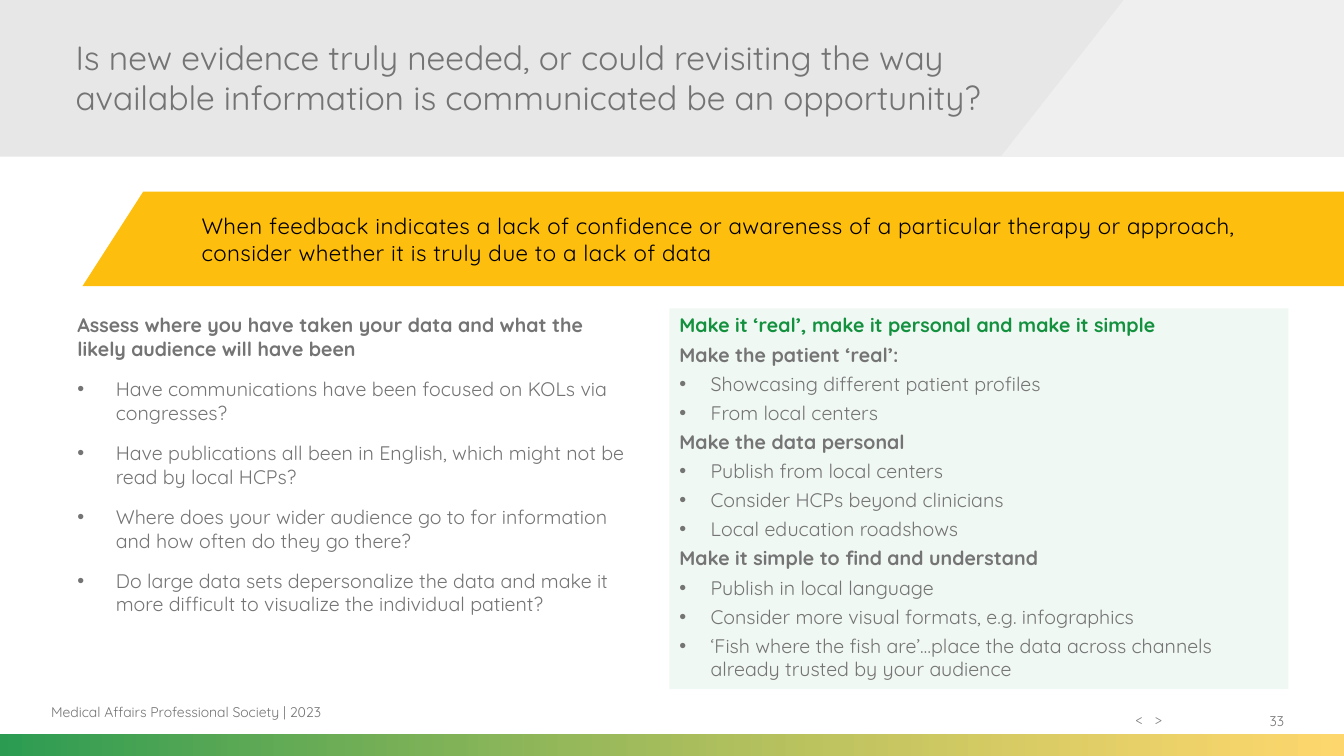
from lxml import etree
from pptx import Presentation
from pptx import util as u
from pptx.dml.color import RGBColor
from pptx.enum import shapes, text
from pptx.oxml.ns import qn

FONT = "Quicksand"
COLORS = {
    "text": "747474", "nav": "808080", "black": "000000",
    "green": "13913F", "yellow": "FEBE0D", "mint": "DDF0E4",
    "header": "D9D9D9", "wedge": "F2F2F2",
}
WIDTH, HEIGHT = 33.87, 19.05

ASSESS = [
    ("Assess where you have taken your data and what the likely audience will have been", [
        "Have communications have been focused on KOLs via congresses?",
        "Have publications all been in English, which might not be read by local HCPs?",
        "Where does your wider audience go to for information and how often do they go there?",
        "Do large data sets depersonalize the data and make it more difficult to visualize "
        "the individual patient?",
    ]),
]
MAKE_IT = [
    ("Make it ‘real’, make it personal and make it simple", []),
    ("Make the patient ‘real’:", [
        "Showcasing different patient profiles",
        "From local centers",
    ]),
    ("Make the data personal", [
        "Publish from local centers",
        "Consider HCPs beyond clinicians",
        "Local education roadshows",
    ]),
    ("Make it simple to find and understand", [
        "Publish in local language",
        "Consider more visual formats, e.g. infographics",
        "‘Fish where the fish are’…place the data across channels already trusted by your audience",
    ]),
]


def rgb(name):
    return RGBColor.from_string(COLORS[name])


def set_alpha(sp, *percents):
    for clr, pct in zip(sp._element.spPr.iter(qn("a:srgbClr")), percents):
        etree.SubElement(clr, qn("a:alpha")).set("val", str(pct * 1000))


def paint(sp, color, alpha=100):
    sp.shadow.inherit = False
    sp.fill.solid()
    sp.fill.fore_color.rgb = rgb(color)
    if alpha < 100:
        set_alpha(sp, alpha)
    sp.line.fill.background()
    return sp


def add_outline(s, points, color, alpha=100):
    pts = [(u.Cm(x), u.Cm(y)) for x, y in points]
    builder = s.shapes.build_freeform(*pts[0])
    builder.add_line_segments(pts[1:], close=True)
    return paint(builder.convert_to_shape(), color, alpha)


def add_box(s, x, y, w, h, anchor=text.MSO_ANCHOR.TOP):
    sp = s.shapes.add_textbox(u.Cm(x), u.Cm(y), u.Cm(w), u.Cm(h))
    return setup_frame(sp, anchor)


def setup_frame(sp, anchor):
    tf = sp.text_frame
    tf.word_wrap = True
    tf.auto_size = text.MSO_AUTO_SIZE.NONE
    tf.vertical_anchor = anchor
    return tf


def write(p, words, size=14, color="text", bold=False, align=text.PP_ALIGN.LEFT,
          before=0, after=0, indent=None, tab=None, spacing=None):
    pPr = p._p.get_or_add_pPr()
    if indent:
        pPr.set("marL", str(u.Cm(indent)))
        pPr.set("indent", str(-u.Cm(indent)))
        etree.SubElement(pPr, qn("a:buFont")).set("typeface", "Arial")
        etree.SubElement(pPr, qn("a:buChar")).set("char", "•")
    if tab:
        stop = etree.SubElement(etree.SubElement(pPr, qn("a:tabLst")), qn("a:tab"))
        stop.set("pos", str(u.Cm(tab)))
        stop.set("algn", "l")
    p.alignment = align
    p.space_before = u.Pt(before)
    p.space_after = u.Pt(after)
    r = p.add_run()
    r.text = words
    r.font.name = FONT
    r.font.size = u.Pt(size)
    r.font.bold = bold
    r.font.color.rgb = rgb(color)
    if spacing:
        r._r.get_or_add_rPr().set("spc", str(round(spacing * 100)))


def write_sections(tf, sections, indent, before, after, first_color="text"):
    rows = []
    for heading, bullets in sections:
        rows.append((heading, True))
        rows.extend((bullet, False) for bullet in bullets)
    for i, (words, heading) in enumerate(rows):
        p = tf.add_paragraph() if i else tf.paragraphs[0]
        write(p, words, bold=heading, color="text" if i else first_color,
              before=before if i else 0, after=after,
              indent=None if heading else indent)


def add_header(s):
    add_outline(s, [(-0.05, 0), (WIDTH, 0), (WIDTH, 3.95), (-0.05, 3.95)], "header", 62)
    add_outline(s, [(28.32, 0), (WIDTH, 0), (WIDTH, 3.95), (25.22, 3.95)], "wedge", 79)


def add_footer(s):
    bar = s.shapes.add_shape(shapes.MSO_SHAPE.RECTANGLE, 0, u.Cm(18.52),
                             u.Cm(WIDTH), u.Cm(HEIGHT - 18.52))
    bar.shadow.inherit = False
    bar.fill.gradient()
    bar.fill.gradient_angle = 0
    for stop, color in zip(bar.fill.gradient_stops, ("green", "yellow")):
        stop.color.rgb = rgb(color)
    set_alpha(bar, 90, 60)
    bar.line.fill.background()
    middle = text.MSO_ANCHOR.MIDDLE
    write(add_box(s, 30.3, 17.65, 2.31, 1.02, middle).paragraphs[0], "33",
          size=10, align=text.PP_ALIGN.RIGHT)
    write(add_box(s, 28.37, 17.78, 1.78, 0.69).paragraphs[0], "<\t>",
          size=10, color="nav", tab=0.48)
    write(add_box(s, 1.04, 17.42, 10.72, 1.02, middle).paragraphs[0],
          "Medical Affairs Professional Society | 2023", size=10)


def add_banner(s):
    sp = add_outline(s, [(3.61, 4.83), (WIDTH, 4.83), (WIDTH, 7.21), (2.08, 7.21)], "yellow")
    tf = setup_frame(sp, text.MSO_ANCHOR.MIDDLE)
    tf.margin_left, tf.margin_right = u.Cm(3), u.Cm(0.89)
    tf.margin_top = tf.margin_bottom = u.Cm(0.25)
    write(tf.paragraphs[0],
          "When feedback indicates a lack of confidence or awareness of a particular therapy "
          "or approach, consider whether it is truly due to a lack of data",
          size=16, color="black", spacing=0.3)


def format_title(s):
    title = s.shapes.title
    s.shapes._spTree.append(title._element)
    title.left, title.top = u.Cm(1.65), u.Cm(0)
    title.width, title.height = u.Cm(25.4), u.Cm(3.89)
    tf = setup_frame(title, text.MSO_ANCHOR.MIDDLE)
    write(tf.paragraphs[0],
          "Is new evidence truly needed, or could revisiting the way available information "
          "is communicated be an opportunity?", size=24)


def add_panel(s):
    sp = s.shapes.add_shape(shapes.MSO_SHAPE.RECTANGLE, u.Cm(16.87), u.Cm(7.77),
                            u.Cm(15.6), u.Cm(9.6))
    paint(sp, "mint", 42)
    tf = setup_frame(sp, text.MSO_ANCHOR.TOP)
    write_sections(tf, MAKE_IT, indent=0.79, before=0, after=4, first_color="green")


def main():
    prs = Presentation()
    prs.slide_width, prs.slide_height = u.Cm(WIDTH), u.Cm(HEIGHT)
    s = prs.slides.add_slide(prs.slide_layouts[5])
    add_header(s)
    add_footer(s)
    add_banner(s)
    format_title(s)
    write_sections(add_box(s, 1.7, 7.77, 14.35, 9.09), ASSESS, indent=0.97, before=6, after=6)
    add_panel(s)
    prs.save("out.pptx")


if __name__ == "__main__":
    main()
